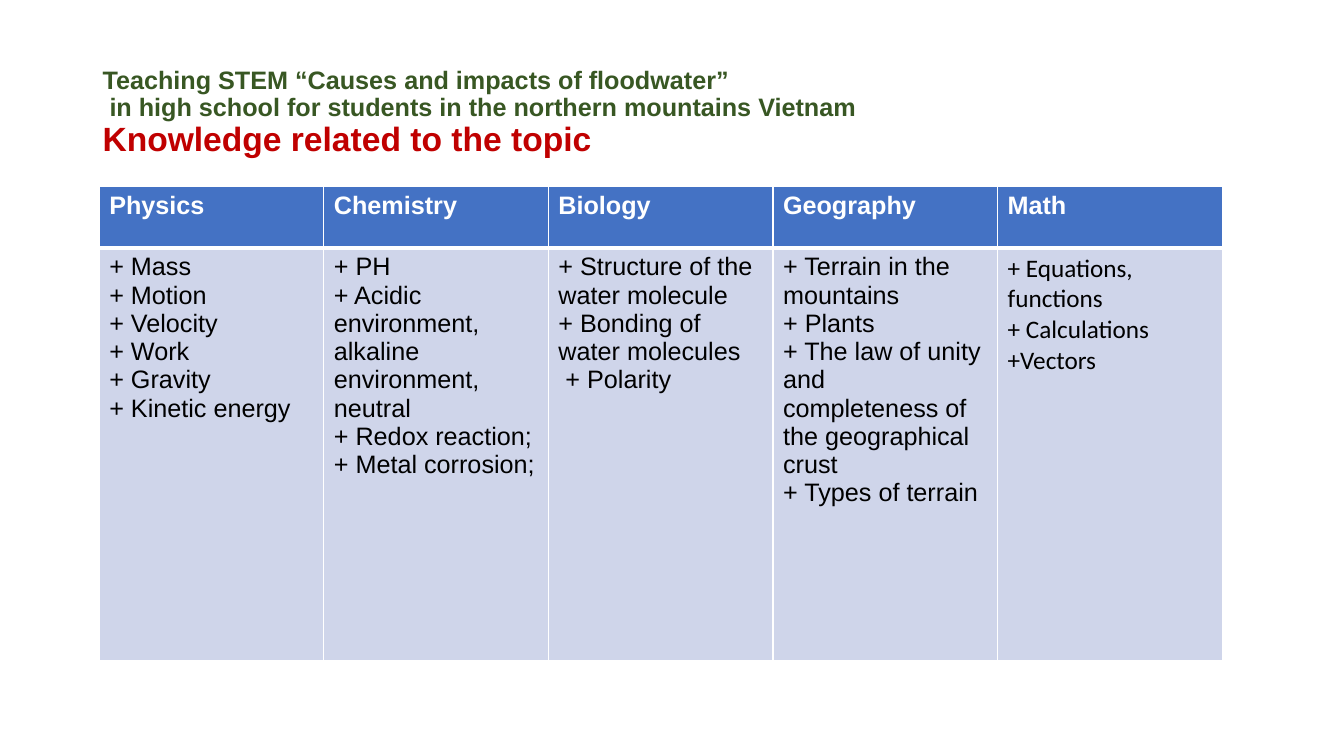
from lxml import etree
from pptx import Presentation
from pptx import util as u
from pptx.dml.color import RGBColor
from pptx.enum import text
from pptx.oxml import ns

GREEN = RGBColor(0x38, 0x57, 0x23)
RED = RGBColor(0xC0, 0x00, 0x00)
BLUE = RGBColor(0x44, 0x72, 0xC4)
PALE_BLUE = RGBColor(0xCF, 0xD5, 0xEA)
WHITE = RGBColor(0xFF, 0xFF, 0xFF)
BLACK = RGBColor(0x00, 0x00, 0x00)

TITLE_LINES = [
    ("Teaching STEM “Causes and impacts of floodwater”", 18, GREEN),
    (" in high school for students in the northern mountains Vietnam", 18, GREEN),
    ("Knowledge related to the topic", 24, RED),
]
SUBJECTS = {
    "Physics": ["+ Mass", "+ Motion", "+ Velocity", "+ Work", "+ Gravity",
                "+ Kinetic energy"],
    "Chemistry": ["+ PH", "+ Acidic environment, alkaline environment, neutral",
                  "+ Redox reaction;", "+ Metal corrosion;"],
    "Biology": ["+ Structure of the water molecule",
                "+ Bonding of water molecules", " + Polarity"],
    "Geography": ["+ Terrain in the mountains", "+ Plants",
                  "+ The law of unity and completeness of the geographical crust",
                  "+ Types of terrain"],
    "Math": ["+ Equations, functions", "+ Calculations +Vectors"],
}


def format_font(font, size, color, bold, name="Arial"):
    values = {"size": u.Pt(size), "bold": bold, "name": name}
    for attribute, value in values.items():
        setattr(font, attribute, value)
    font.color.rgb = color


def fill_cell(cell, lines, fill, color, bold, bottom_width, name="Arial"):
    # Borders come before the fill in the cell properties
    properties = cell._tc.get_or_add_tcPr()
    for side, width in (("L", 1), ("R", 1), ("T", 1), ("B", bottom_width)):
        line = etree.SubElement(properties, ns.qn(f"a:ln{side}"), w=str(u.Pt(width)))
        solid = etree.SubElement(line, ns.qn("a:solidFill"))
        etree.SubElement(solid, ns.qn("a:srgbClr"), val=str(WHITE))
    cell.fill.solid()
    cell.fill.fore_color.rgb = fill
    cell.text_frame.text = "\n".join(lines)
    for paragraph in cell.text_frame.paragraphs:
        format_font(paragraph.runs[0].font, 18, color, bold, name)


presentation = Presentation()
presentation.slide_width = u.Cm(33.87)
presentation.slide_height = u.Cm(19.05)
slide = presentation.slides.add_slide(presentation.slide_layouts[5])

# Title
title = slide.shapes.title
title_box = {"left": 2.33, "top": 1.01, "width": 29.21, "height": 3.68}
for attribute, length in title_box.items():
    setattr(title, attribute, u.Cm(length))
title.text_frame.vertical_anchor = text.MSO_ANCHOR.MIDDLE
title.text_frame.auto_size = text.MSO_AUTO_SIZE.NONE
paragraph = title.text_frame.paragraphs[0]
paragraph.alignment = text.PP_ALIGN.LEFT
paragraph.line_spacing = 0.9
for index, (line, size, color) in enumerate(TITLE_LINES):
    if index:
        paragraph.add_line_break()
    run = paragraph.add_run()
    run.text = line
    format_font(run.font, size, color, True)

# Table of subjects, one column each
table = slide.shapes.add_table(2, len(SUBJECTS), u.Cm(2.5), u.Cm(4.7),
                               u.Cm(28.3), u.Cm(11.94)).table
for row, height in zip(table.rows, (1.55, 10.39)):
    row.height = u.Cm(height)
for column, (subject, topics) in enumerate(SUBJECTS.items()):
    table.columns[column].width = u.Cm(5.66)
    topic_font = "Calibri" if subject == "Math" else "Arial"
    fill_cell(table.cell(0, column), [subject], BLUE, WHITE, True, 3)
    fill_cell(table.cell(1, column), topics, PALE_BLUE, BLACK, False, 1, topic_font)

# Thick rule under the header, seen from the row below
for cell in table.rows[1].cells:
    cell._tc.tcPr.find(ns.qn("a:lnT")).set("w", str(u.Pt(3)))

presentation.save("out.pptx")
